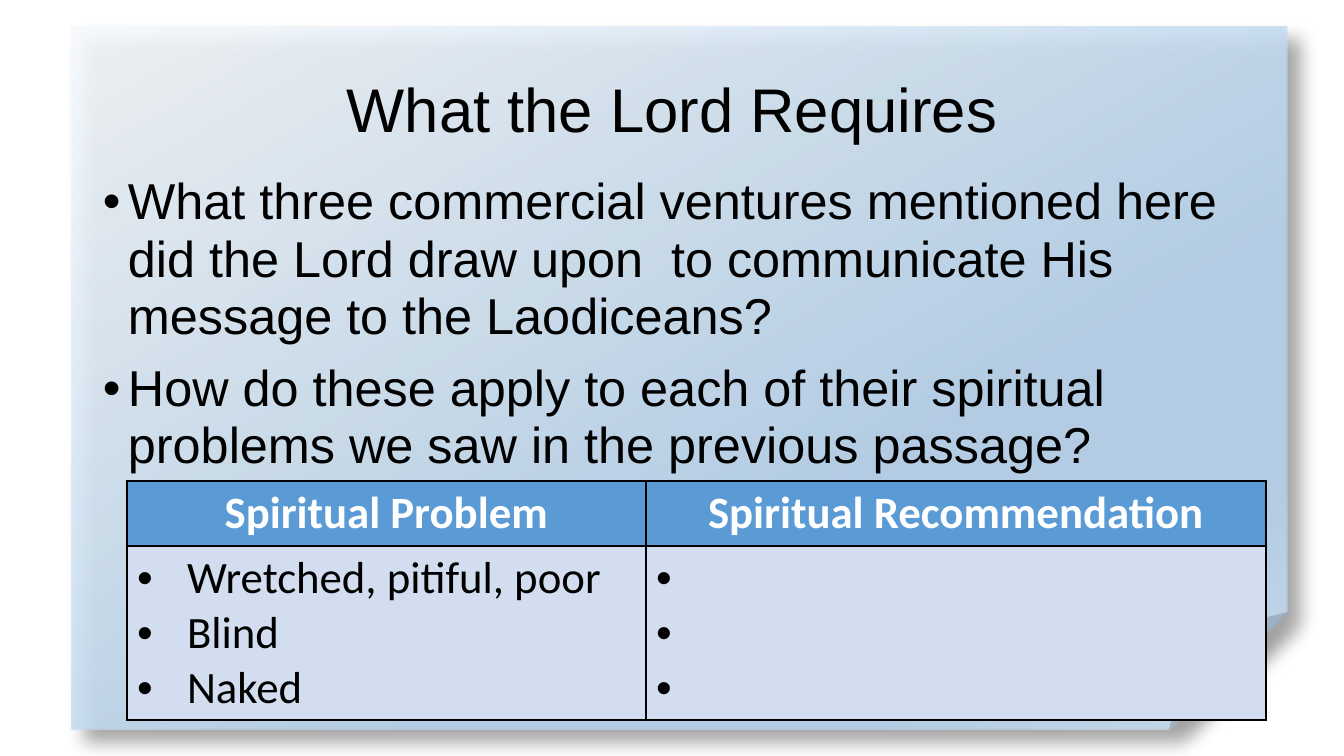
from lxml import etree
from pptx import Presentation
from pptx.dml.color import RGBColor
from pptx.enum.shapes import MSO_SHAPE
from pptx.enum.text import MSO_ANCHOR, PP_ALIGN
from pptx.oxml import parse_xml
from pptx.oxml.ns import nsdecls, qn
from pptx.util import Pt

PX = 914400 / 100.8  # EMU per px
COLORS = {
    "text": "000000", "header_text": "FFFFFF", "header": "5B9BD5", "cell": "D2DEEF",
    "pale": "F7FAFD", "blue": "B5D2EC", "light": "CEE1F2",
}


def px(*lengths):
    return [round(n * PX) for n in lengths]


def style(p, size, font, color, bold=False, indent=0):
    """Format a paragraph; a nonzero indent (px) gives it a hanging bullet."""
    if indent:
        pPr = p._p.get_or_add_pPr()
        pPr.set("marL", str(px(indent)[0]))
        pPr.set("indent", str(-px(indent)[0]))
        etree.SubElement(pPr, qn("a:buFont")).set("typeface", "Arial")
        etree.SubElement(pPr, qn("a:buChar")).set("char", "•")
    for r in p.runs:
        r.font.size, r.font.name, r.font.bold = Pt(size), font, bold
        r.font.color.rgb = RGBColor.from_string(COLORS[color])


prs = Presentation()
prs.slide_width, prs.slide_height = px(1344, 756)
s = prs.slides.add_slide(prs.slide_layouts[5])

# Folded paper, behind everything
paper = s.shapes.add_shape(MSO_SHAPE.FOLDED_CORNER, *px(72, 27, 1215, 703))
paper.line.fill.background()
stops = "".join(
    f'<a:gs pos="{pos * 1000}"><a:srgbClr val="{COLORS[name]}"><a:alpha val="87000"/></a:srgbClr></a:gs>'
    for pos, name in [(0, "pale"), (64, "blue"), (83, "blue"), (100, "light")])
spPr = paper._element.spPr
spPr.find(qn("a:prstGeom")).addnext(parse_xml(
    f'<a:gradFill {nsdecls("a")} rotWithShape="1"><a:gsLst>{stops}</a:gsLst>'
    '<a:lin ang="3600000" scaled="0"/></a:gradFill>'))
spPr.append(parse_xml(
    f'<a:effectLst {nsdecls("a")}><a:outerShdw blurRad="{Pt(13)}" dist="{Pt(13)}" dir="2700000" '
    'algn="tl" rotWithShape="0"><a:srgbClr val="000000"><a:alpha val="40000"/></a:srgbClr>'
    '</a:outerShdw></a:effectLst>'))
s.shapes._spTree.insert(2, paper._element)

# Title
title = s.shapes.title
title.left, title.top, title.width, title.height = px(93, 40, 1159, 146)
tf = title.text_frame
tf.text = "What the Lord Requires"
tf.vertical_anchor = MSO_ANCHOR.MIDDLE
p = tf.paragraphs[0]
p.alignment, p.line_spacing = PP_ALIGN.CENTER, 0.9
style(p, 44, "Arial", "text")

# Questions
tf = s.shapes.add_textbox(*px(93, 169, 1159, 300)).text_frame
tf.word_wrap = True
questions = [
    "What three commercial ventures mentioned here did the Lord draw upon  to communicate "
    "His message to the Laodiceans?",
    "How do these apply to each of their spiritual problems we saw in the previous passage?",
]
tf.text = "\n".join(questions)
for i, p in enumerate(tf.paragraphs):
    p.line_spacing = 0.95
    p.space_before = Pt(10 if i else 0)
    style(p, 36, "Arial", "text", indent=25)

# Problem and recommendation table
table = s.shapes.add_table(2, 2, *px(127, 481, 1139, 239)).table
for column, width in zip(table.columns, px(519, 620)):
    column.width = width
for row, height in zip(table.rows, px(65, 174)):
    row.height = height
rows = [
    ["Spiritual Problem", "Spiritual Recommendation"],
    ["Wretched, pitiful, poor\nBlind\nNaked", " \n \n "],  # recommendations are left open
]
for i, texts in enumerate(rows):
    for j, text in enumerate(texts):
        cell = table.cell(i, j)
        cell.text = text
        cell.fill.solid()
        cell.fill.fore_color.rgb = RGBColor.from_string(COLORS["cell" if i else "header"])
        for k, side in enumerate("LRTB"):
            cell._tc.get_or_add_tcPr().insert(k, parse_xml(
                f'<a:ln{side} {nsdecls("a")} w="{Pt(1)}"><a:solidFill>'
                f'<a:srgbClr val="{COLORS["text"]}"/></a:solidFill></a:ln{side}>'))
        for p in cell.text_frame.paragraphs:
            if i:
                style(p, 32, "Calibri", "text", indent=50)
            else:
                p.alignment = PP_ALIGN.CENTER
                style(p, 32, "Calibri", "header_text", bold=True)

prs.save("out.pptx")
